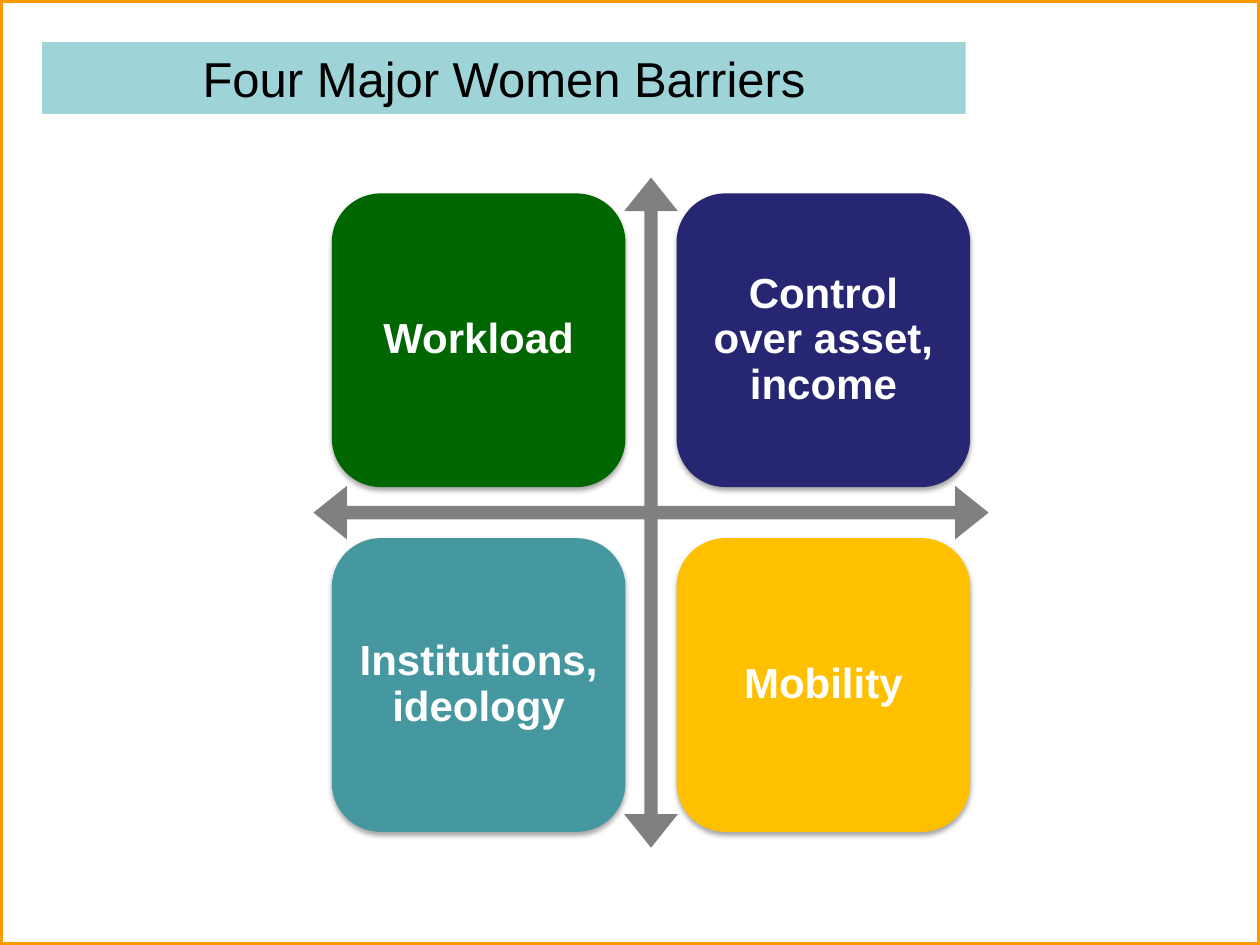
import pptx
import pptx.dml.color
import pptx.enum.shapes
import pptx.enum.text
import pptx.oxml
import pptx.oxml.ns
import pptx.util
from pptx.util import Cm, Pt

COLOURS = {
    "banner": "9ED3D7",
    "banner text": "000000",
    "frame": "FF9900",
    "arrows": "808080",
    "card text": "FFFFFF",
    "green": "006600",
    "navy": "262673",
    "teal": "4597A0",
    "amber": "FFC000",
}
BARRIERS = [
    [("Workload", "green"), ("Control over asset, income", "navy")],
    [("Institutions, ideology", "teal"), ("Mobility", "amber")],
]
CARD_SIZE = 5.92
CARD_GAP = 1.03
SHAPES = pptx.enum.shapes.MSO_SHAPE


def rgb(name):
    return pptx.dml.color.RGBColor.from_string(COLOURS[name])


def add_flat_shape(slide, kind, box, fill=None):
    """Add a preset shape without line or shadow; box is left, top, width, height in cm."""
    shape = slide.shapes.add_shape(kind, *map(Cm, box))
    shape.shadow.inherit = False
    shape.line.fill.background()
    if fill:
        shape.fill.solid()
        shape.fill.fore_color.rgb = rgb(fill)
    else:
        shape.fill.background()
    return shape


def write_centred(shape, text, size, colour, bold=False, line_spacing=1.0):
    frame = shape.text_frame
    frame.word_wrap = True
    frame.vertical_anchor = pptx.enum.text.MSO_ANCHOR.MIDDLE
    paragraph = frame.paragraphs[0]
    paragraph.alignment = pptx.enum.text.PP_ALIGN.CENTER
    paragraph.line_spacing = line_spacing
    run = paragraph.add_run()
    run.text = text
    run.font.name = "Arial"
    run.font.size = Pt(size)
    run.font.bold = bold
    run.font.color.rgb = rgb(colour)


def add_soft_shadow(shape):
    effects = shape.element.spPr.find(pptx.oxml.ns.qn("a:effectLst"))
    effects.append(pptx.oxml.parse_xml(
        f'<a:outerShdw {pptx.oxml.ns.nsdecls("a")} blurRad="{Pt(3.1)}" dist="{Pt(1.8)}"'
        ' dir="5400000" rotWithShape="0"><a:srgbClr val="000000">'
        '<a:alpha val="35000"/></a:srgbClr></a:outerShdw>'))


def add_card(slide, box, text, fill):
    card = add_flat_shape(slide, SHAPES.ROUNDED_RECTANGLE, box, fill)
    add_soft_shadow(card)
    frame = card.text_frame
    frame.margin_left = frame.margin_right = Cm(0.25)
    frame.margin_top = frame.margin_bottom = Cm(0.25)
    write_centred(card, text, 24, "card text", bold=True, line_spacing=0.9)


def add_barrier_matrix(slide, box):
    """Draw the crossed arrows over the box and centre the two-by-two cards on them."""
    left, top, width, height = box
    arrows = add_flat_shape(slide, SHAPES.QUAD_ARROW, box, "arrows")
    for index, value in enumerate((0.02, 0.04, 0.05)):
        arrows.adjustments[index] = value

    grid_size = 2 * CARD_SIZE + CARD_GAP
    grid_left = left + (width - grid_size) / 2
    grid_top = top + (height - grid_size) / 2
    pitch = CARD_SIZE + CARD_GAP
    for row, barriers in enumerate(BARRIERS):
        for column, (text, fill) in enumerate(barriers):
            card_box = (grid_left + column * pitch, grid_top + row * pitch,
                        CARD_SIZE, CARD_SIZE)
            add_card(slide, card_box, text, fill)


def add_title_banner(slide, box):
    banner = add_flat_shape(slide, SHAPES.RECTANGLE, box, "banner")
    write_centred(banner, "Four Major Women Barriers", 28, "banner text")


def add_slide_frame(slide, box):
    border = add_flat_shape(slide, SHAPES.RECTANGLE, box)
    border.line.color.rgb = rgb("frame")
    border.line.width = Pt(3)


def main():
    presentation = pptx.Presentation()
    presentation.slide_width = Cm(25.4)
    presentation.slide_height = Cm(19.05)
    slide = presentation.slides.add_slide(presentation.slide_layouts[6])
    add_barrier_matrix(slide, (6.32, 3.58, 13.61, 13.51))
    add_title_banner(slide, (0.85, 0.85, 18.62, 1.45))
    add_slide_frame(slide, (0, 0, 25.4, 19.05))
    presentation.save("out.pptx")


if __name__ == "__main__":
    main()
